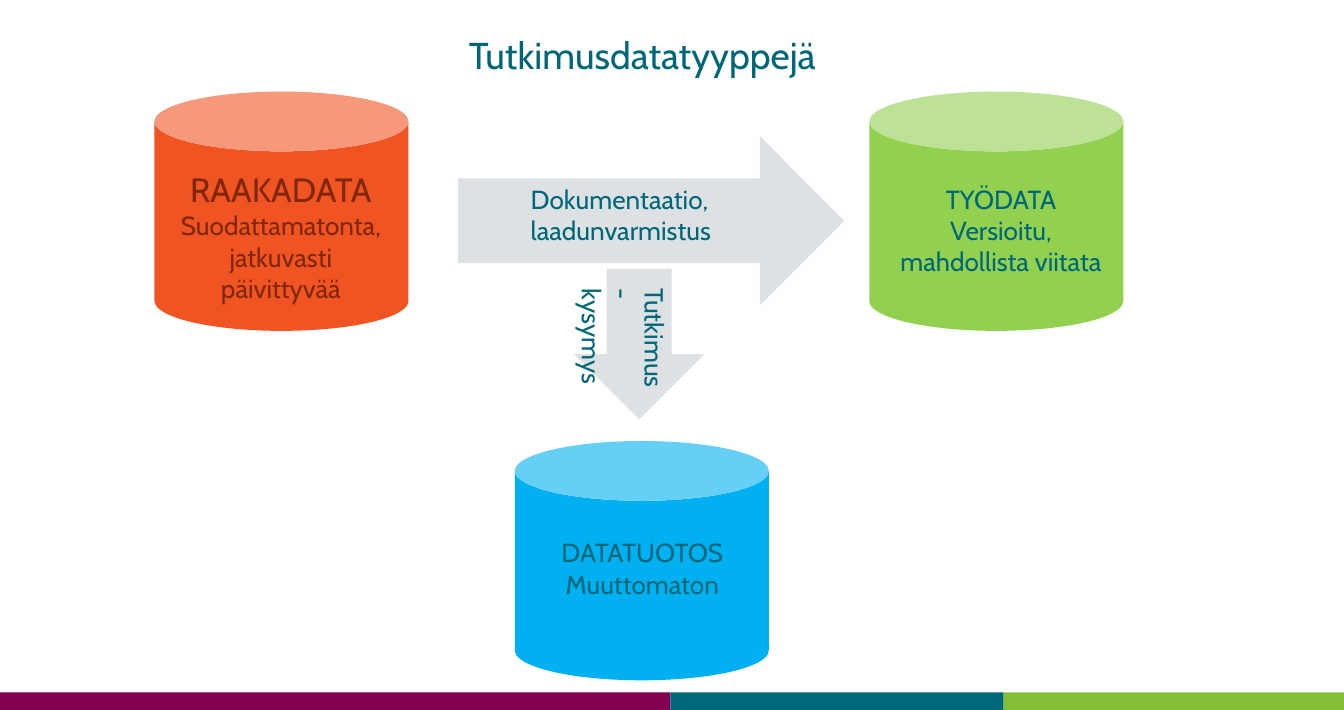
from pptx import Presentation
from pptx.dml.color import RGBColor
from pptx.enum import shapes, text
from pptx.util import Cm, Pt

TEAL = RGBColor(0x00, 0x67, 0x78)
PURPLE = RGBColor(0x83, 0x00, 0x51)
LEAF = RGBColor(0x82, 0xBF, 0x37)
RUST = RGBColor(0x80, 0x26, 0x09)
ORANGE = RGBColor(0xF0, 0x54, 0x22)
GREEN = RGBColor(0x92, 0xD0, 0x50)
BLUE = RGBColor(0x00, 0xB0, 0xF0)
GREY = RGBColor(0xDE, 0xE1, 0xE3)

FONT = "Cabin"
BODY = 14
SLIDE_WIDTH, SLIDE_HEIGHT = 25.4, 13.41
FOOTER_TOP = 13.08
CAN_SIZE = 4.8, 4.52
SHAPE = shapes.MSO_SHAPE
CENTER, LEFT = text.PP_ALIGN.CENTER, text.PP_ALIGN.LEFT

footer_bands = [(0, PURPLE), (12.67, TEAL), (18.97, LEAF)]

data_types = [
    {"at": (2.92, 1.73), "fill": ORANGE, "color": RUST, "label": (3.1, 3.07, 4.42, 2.82),
     "lines": [("RAAKADATA", 18), ("Suodattamatonta, jatkuvasti päivittyvää", BODY)]},
    {"at": (16.43, 1.73), "fill": GREEN, "color": TEAL, "label": (16.71, 3.33, 4.42, 2.06),
     "lines": [("TYÖDATA", BODY), ("Versioitu, mahdollista viitata", BODY)]},
    {"at": (9.73, 8.33), "fill": BLUE, "color": TEAL, "label": (9.93, 10.01, 4.42, 1.45),
     "lines": [("DATATUOTOS", BODY), ("Muuttomaton", BODY)]},
]

steps = [
    {"arrow": SHAPE.RIGHT_ARROW, "box": (8.66, 2.57, 7.3, 3.2),
     "label": (9.78, 3.33, 6.6, 1.45), "turn": 0,
     "lines": [("Dokumentaatio, laadunvarmistus", BODY)]},
    {"arrow": SHAPE.DOWN_ARROW, "box": (10.85, 5.08, 2.46, 2.84),
     "label": (10.81, 5.74, 2.53, 1.45), "turn": 90,
     "lines": [("Tutkimus-", BODY), ("kysymys", BODY)]},
]

title = [("Tutkimusdatatyyppejä", 20)]
title_box = (8.61, 0.48, 7.19, 1.12)


def add_filled(slide, kind, box, color):
    shape = slide.shapes.add_shape(kind, *map(Cm, box))
    shape.shadow.inherit = False
    shape.fill.solid()
    shape.fill.fore_color.rgb = color
    shape.line.fill.background()


def add_label(slide, box, lines, color, align=LEFT, turn=0):
    label = slide.shapes.add_textbox(*map(Cm, box))
    label.rotation = turn
    frame = label.text_frame
    frame.word_wrap = True
    for index, (line, size) in enumerate(lines):
        paragraph = frame.add_paragraph() if index else frame.paragraphs[0]
        paragraph.text = line
        paragraph.alignment = align
        paragraph.font.name = FONT
        paragraph.font.size = Pt(size)
        paragraph.font.color.rgb = color


def main():
    deck = Presentation()
    deck.slide_width, deck.slide_height = Cm(SLIDE_WIDTH), Cm(SLIDE_HEIGHT)
    slide = deck.slides.add_slide(deck.slide_layouts[6])

    ends = [left for left, _ in footer_bands[1:]] + [SLIDE_WIDTH]
    for (left, color), end in zip(footer_bands, ends):
        band = (left, FOOTER_TOP, end - left, SLIDE_HEIGHT - FOOTER_TOP)
        add_filled(slide, SHAPE.RECTANGLE, band, color)

    for data in data_types:
        add_filled(slide, SHAPE.CAN, data["at"] + CAN_SIZE, data["fill"])
        add_label(slide, data["label"], data["lines"], data["color"], CENTER)

    for step in steps:
        add_filled(slide, step["arrow"], step["box"], GREY)
        add_label(slide, step["label"], step["lines"], TEAL, turn=step["turn"])

    add_label(slide, title_box, title, TEAL)
    deck.save("out.pptx")


if __name__ == "__main__":
    main()
